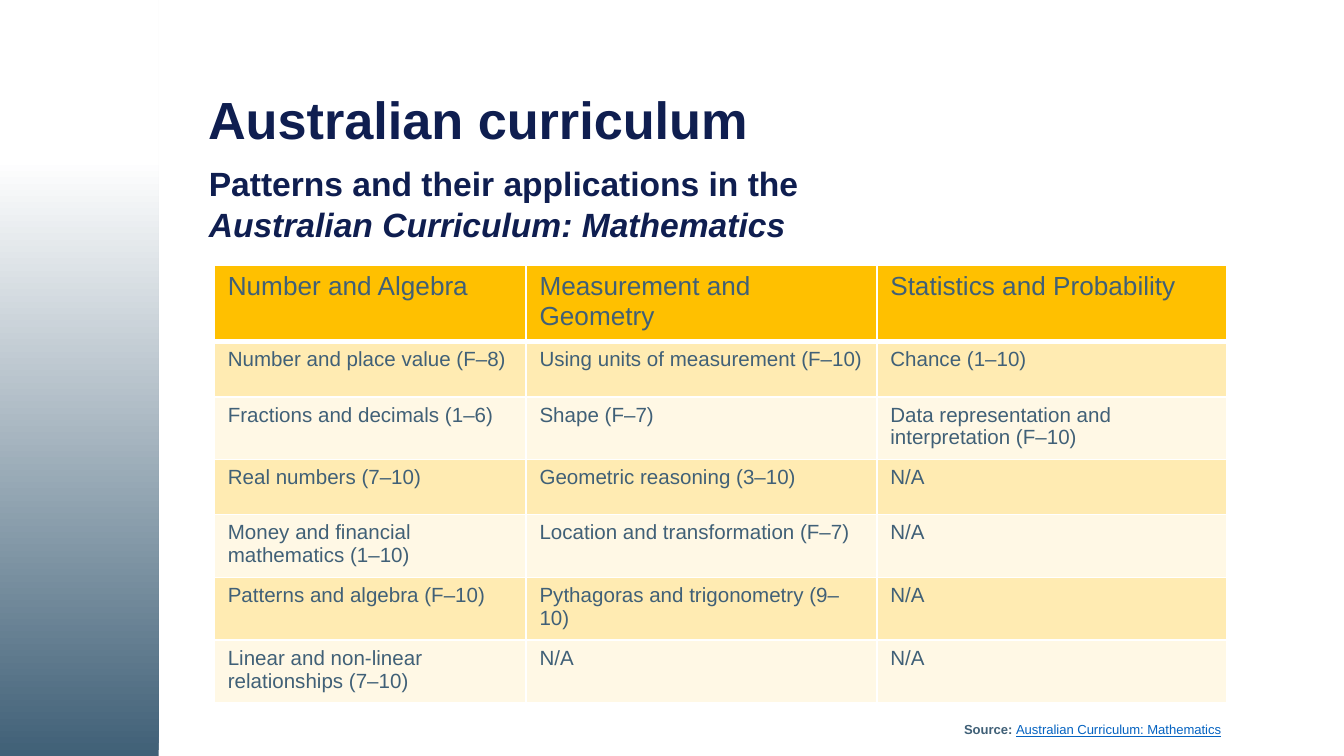
import pptx
import pptx.dml.color
import pptx.enum.dml
import pptx.enum.shapes
import pptx.enum.text
import pptx.oxml
import pptx.oxml.ns
import pptx.util
from dataclasses import dataclass
from lxml import etree


@dataclass(frozen=True)
class Theme:
    font: str = "Arial"
    navy: str = "0F1E50"
    slate: str = "406077"
    link: str = "0563C1"
    amber: str = "FFC000"
    white: str = "FFFFFF"
    title_size: int = 28
    subtitle_size: int = 18
    header_size: int = 14
    body_size: int = 11
    source_size: int = 7


THEME = Theme()
PX_PER_INCH = 200
SLIDE_WIDTH, SLIDE_HEIGHT = 2000, 1125
STRANDS = ["Number and Algebra", "Measurement and Geometry", "Statistics and Probability"]
TOPICS = [
    ["Number and place value (F–8)", "Using units of measurement (F–10)", "Chance (1–10)"],
    ["Fractions and decimals (1–6)", "Shape (F–7)",
     "Data representation and interpretation (F–10)"],
    ["Real numbers (7–10)", "Geometric reasoning (3–10)", "N/A"],
    ["Money and financial mathematics (1–10)", "Location and transformation (F–7)", "N/A"],
    ["Patterns and algebra (F–10)", "Pythagoras and trigonometry (9–10)", "N/A"],
    ["Linear and non-linear relationships (7–10)", "N/A", "N/A"],
]


def px(length):
    return pptx.util.Emu(length * pptx.util.Inches(1) // PX_PER_INCH)


def rgb(color):
    return pptx.dml.color.RGBColor.from_string(color)


def add_run(paragraph, text, *, size, color, bold=False, italic=False, underline=False):
    run = paragraph.add_run()
    run.text = text
    font = run.font
    font.name, font.size, font.color.rgb = THEME.font, pptx.util.Pt(size), rgb(color)
    font.bold, font.italic, font.underline = bold, italic, underline


def add_text_frame(slide, box):
    """Add a wrapping text box and return its frame."""
    frame = slide.shapes.add_textbox(*map(px, box)).text_frame
    frame.word_wrap = True
    return frame


def add_side_band(slide, box):
    """Add a borderless strip that fades from slate at the bottom to white."""
    band = slide.shapes.add_shape(pptx.enum.shapes.MSO_SHAPE.RECTANGLE, *map(px, box))
    band.shadow.inherit = False
    band.line.fill.background()
    band.fill.gradient()
    band.fill.gradient_angle = 90
    fade = [(0, THEME.slate), (0.79, THEME.white)]
    for stop, (position, color) in zip(band.fill.gradient_stops, fade):
        stop.position = position
        stop.color.rgb = rgb(color)


def add_heading(slide, box):
    """Add the title and, below it, the two-line subtitle."""
    left, top, width, height = box
    title = add_text_frame(slide, (left, top, width - 204, 207))
    title.vertical_anchor = pptx.enum.text.MSO_ANCHOR.MIDDLE
    title.paragraphs[0].line_spacing = 0.9
    add_run(title.paragraphs[0], "Australian curriculum",
            size=THEME.title_size, color=THEME.navy, bold=True)

    subtitle_top = top + 154
    subtitle = add_text_frame(slide, (left + 1, subtitle_top, width, top + height - subtitle_top))
    subtitle.auto_size = pptx.enum.text.MSO_AUTO_SIZE.SHAPE_TO_FIT_TEXT
    line = subtitle.paragraphs[0]
    style = dict(size=THEME.subtitle_size, color=THEME.navy, bold=True)
    add_run(line, "Patterns and their applications in the ", **style)
    line.add_line_break()
    add_run(line, "Australian Curriculum: Mathematics", italic=True, **style)


def fill_cell(cell, color, opacity):
    cell.fill.solid()
    cell.fill.fore_color.rgb = rgb(color)
    if opacity < 100:
        srgb = cell.fill._xPr.find(".//" + pptx.oxml.ns.qn("a:srgbClr"))
        etree.SubElement(srgb, pptx.oxml.ns.qn("a:alpha"), val=str(opacity * 1000))


def set_borders(cell, widths):
    """Draw white borders; widths maps the sides L, R, T, B, in that order, to points."""
    properties = cell._tc.get_or_add_tcPr()
    for index, (side, width) in enumerate(widths.items()):
        properties.insert(index, pptx.oxml.parse_xml(
            f'<a:ln{side} {pptx.oxml.ns.nsdecls("a")} w="{pptx.util.Pt(width)}">'
            f'<a:solidFill><a:srgbClr val="{THEME.white}"/></a:solidFill></a:ln{side}>'))


def add_curriculum_table(slide, box, column_widths, row_height):
    rows = [STRANDS, *TOPICS]
    table = slide.shapes.add_table(len(rows), len(STRANDS), *map(px, box)).table
    table.first_row = table.horz_banding = False
    for column, width in zip(table.columns, column_widths):
        column.width = px(width)
    for row_index, texts in enumerate(rows):
        table.rows[row_index].height = px(row_height)
        is_header = row_index == 0
        size = THEME.header_size if is_header else THEME.body_size
        opacity = 100 if is_header else (10, 30)[row_index % 2]
        borders = {"L": 1, "R": 1, "T": 3 if row_index == 1 else 1, "B": 3 if is_header else 1}
        for column_index, text in enumerate(texts):
            cell = table.cell(row_index, column_index)
            add_run(cell.text_frame.paragraphs[0], text, size=size, color=THEME.slate)
            fill_cell(cell, THEME.amber, opacity)
            set_borders(cell, borders)


def add_source(slide, box):
    frame = add_text_frame(slide, box)
    frame.auto_size = pptx.enum.text.MSO_AUTO_SIZE.SHAPE_TO_FIT_TEXT
    line = frame.paragraphs[0]
    add_run(line, "Source: ", size=THEME.source_size, color=THEME.slate, bold=True)
    add_run(line, "Australian Curriculum: Mathematics",
            size=THEME.source_size, color=THEME.link, underline=True)


def main():
    presentation = pptx.Presentation()
    presentation.slide_width, presentation.slide_height = px(SLIDE_WIDTH), px(SLIDE_HEIGHT)
    slide = presentation.slides.add_slide(presentation.slide_layouts[6])
    add_side_band(slide, (0, 0, 236, SLIDE_HEIGHT))
    add_heading(slide, (290, 79, 1530, 295))
    add_source(slide, (1415, 1064, 426, 44))
    add_curriculum_table(slide, (319, 395, 1507, 574), (464, 522, 521), 82)
    presentation.save("out.pptx")


if __name__ == "__main__":
    main()
